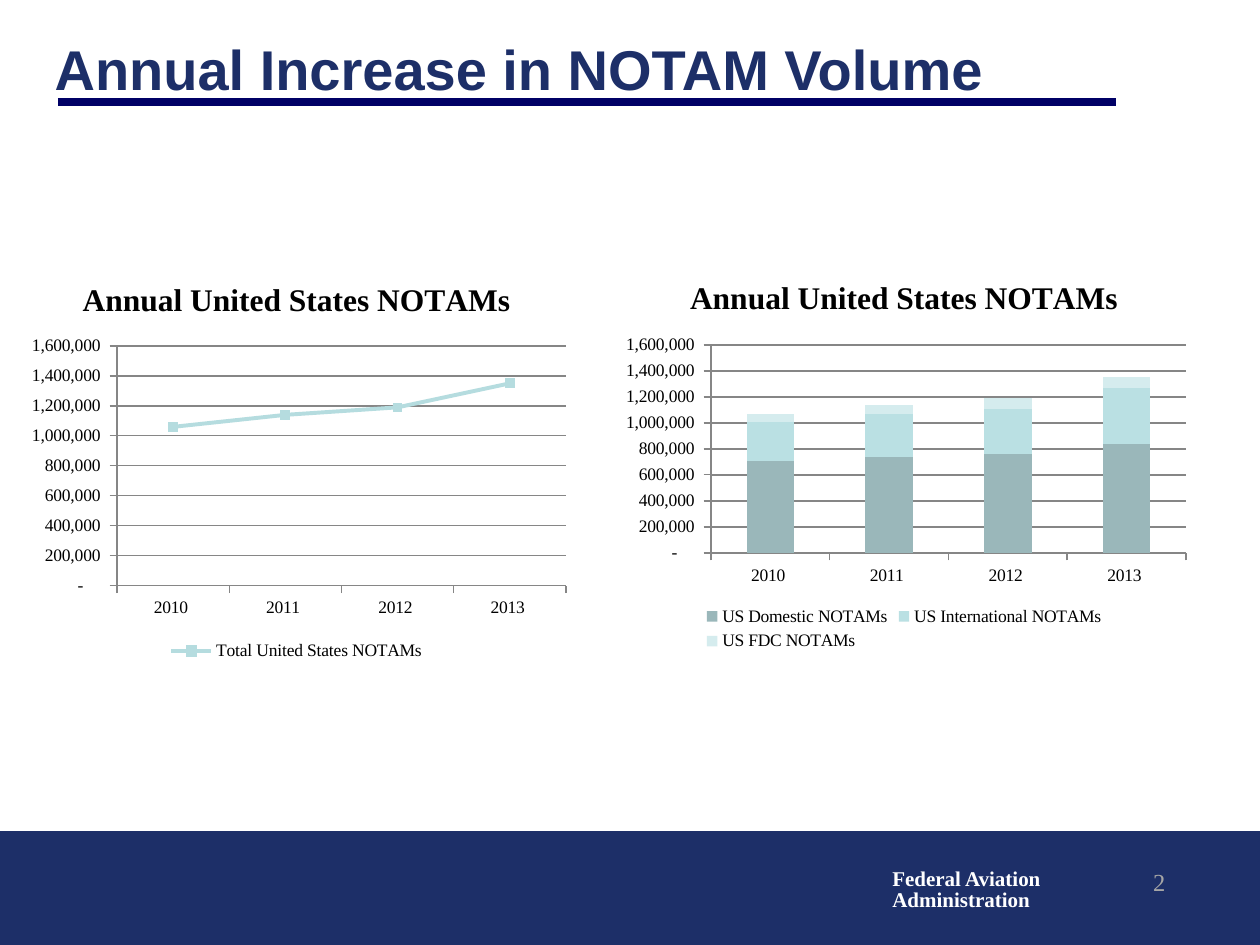
from lxml import etree
from pptx import Presentation
from pptx import util as u
from pptx.chart.data import CategoryChartData
from pptx.dml.color import RGBColor
from pptx.enum import chart as ch, shapes, text
from pptx.oxml.ns import qn

SCALE = 914400 / 126
SERIF, SANS = "Times New Roman", "Arial"
C = {"navy": "1D2F68", "rule": "000066", "white": "FFFFFF", "black": "000000",
     "number": "A6A6A6", "grid": "868686", "total": "B5DCDF",
     "domestic": "9AB7BA", "international": "BAE0E3", "fdc": "D5ECEE"}
YEARS = ["2010 ", "2011 ", "2012 ", "2013 "]
NUMBER_FORMAT = r'_(* #,##0_);_(* \(#,##0\);_(* "-"??_);_('


def px(n):
    return u.Emu(round(n * SCALE))


def rgb(name):
    return RGBColor.from_string(C[name])


def set_font(f, size, color="black", bold=False, name=SERIF):
    f.size, f.bold, f.name = u.Pt(size), bold, name
    f.color.rgb = rgb(color)


def add_text(sp, lines, size, color, bold=False, name=SERIF, wrap=True,
             align=text.PP_ALIGN.LEFT, anchor=text.MSO_ANCHOR.TOP, spacing=1.0):
    tf = sp.text_frame
    tf.word_wrap, tf.vertical_anchor = wrap, anchor
    tf.auto_size = text.MSO_AUTO_SIZE.NONE
    for i, line in enumerate(lines):
        p = tf.add_paragraph() if i else tf.paragraphs[0]
        p.alignment, p.line_spacing = align, spacing
        r = p.add_run()
        r.text = line
        set_font(r.font, size, color, bold, name)


def add_heading(s, x, y, w, h):
    sp = s.shapes.title
    sp.left, sp.top, sp.width, sp.height = map(px, (x, y, w, h))
    add_text(sp, ["Annual Increase in NOTAM Volume"], 32, "navy", True, SANS,
             anchor=text.MSO_ANCHOR.MIDDLE)
    rule_y = px(y + 76)
    ln = s.shapes.add_connector(shapes.MSO_CONNECTOR.STRAIGHT,
                                px(x + 16), rule_y, px(x + 1074), rule_y)
    ln.line.color.rgb, ln.line.width = rgb("rule"), u.Pt(4.5)
    etree.SubElement(ln._element.spPr, qn("a:effectLst"))


def add_footer(s, x, y, w, h):
    sp = s.shapes.add_shape(shapes.MSO_SHAPE.RECTANGLE, px(x), px(y), px(w), px(h))
    sp.shadow.inherit = False
    sp.fill.solid()
    sp.fill.fore_color.rgb = sp.line.color.rgb = rgb("navy")
    sp.line.width = u.Pt(0.75)
    agency = s.shapes.add_textbox(px(x + 880), px(y + 31), px(175), px(55))
    add_text(agency, ["Federal Aviation", "Administration"], 12, "white", True,
             wrap=False, spacing=0.85)
    number = s.shapes.add_textbox(px(x + 916), px(y + 29), px(262), px(63))
    add_text(number, ["2"], 14, "number", align=text.PP_ALIGN.RIGHT)


def place_plot(chart, fractions):
    area = chart._chartSpace.chart.plotArea
    for old in area.findall(qn("c:layout")):
        area.remove(old)
    layout = etree.Element(qn("c:layout"))
    area.insert(0, layout)
    manual = etree.SubElement(layout, qn("c:manualLayout"))
    settings = [("layoutTarget", "inner"), ("xMode", "edge"), ("yMode", "edge")]
    settings += zip("xywh", (f"{v:.4f}" for v in fractions))
    for tag, val in settings:
        etree.SubElement(manual, qn("c:" + tag)).set("val", val)


def add_notam_chart(s, kind, x, y, w, h, plot_box, series):
    data = CategoryChartData(number_format="#,##0")
    data.categories = YEARS
    for name, values, _ in series:
        data.add_series(name, values)
    chart = s.shapes.add_chart(kind, px(x), px(y), px(w), px(h), data).chart
    set_font(chart.font, 10)
    chart.has_title = True
    tf = chart.chart_title.text_frame
    tf.text = "Annual United States NOTAMs"
    set_font(tf.paragraphs[0].runs[0].font, 18, bold=True)
    chart.chart_title.include_in_layout = False
    chart.has_legend = True
    chart.legend.position = ch.XL_LEGEND_POSITION.BOTTOM
    chart.legend.include_in_layout = False
    set_font(chart.legend.font, 10)
    va, ca = chart.value_axis, chart.category_axis
    va.minimum_scale, va.maximum_scale, va.major_unit = 0, 1600000, 200000
    va.has_major_gridlines = True
    va.tick_labels.number_format = NUMBER_FORMAT
    va.tick_labels.number_format_is_linked = False
    for ax in (va, ca):
        ax.major_tick_mark = ch.XL_TICK_MARK.OUTSIDE
        set_font(ax.tick_labels.font, 10)
    for fmt in (va.format, ca.format, va.major_gridlines.format):
        fmt.line.color.rgb, fmt.line.width = rgb("grid"), u.Pt(0.75)
    left, top, width, height = plot_box
    place_plot(chart, (left / w, top / h, width / w, height / h))
    chart.plots[0].vary_by_categories = False
    for ser, (_, _, color) in zip(chart.plots[0].series, series):
        if kind == ch.XL_CHART_TYPE.LINE_MARKERS:
            ser.smooth = False
            ser.format.line.color.rgb, ser.format.line.width = rgb(color), u.Pt(2.25)
            ser.marker.style, ser.marker.size = ch.XL_MARKER_STYLE.SQUARE, 5
            ser.marker.format.line.color.rgb = rgb(color)
            fill = ser.marker.format.fill
        else:
            fill = ser.format.fill
        fill.solid()
        fill.fore_color.rgb = rgb(color)
    return chart


def main():
    prs = Presentation()
    prs.slide_width, prs.slide_height = px(1260), px(945)
    s = prs.slides.add_slide(prs.slide_layouts[5])
    add_footer(s, 0, 832, 1260, 112)
    add_heading(s, 42, 26, 1168, 84)
    add_notam_chart(s, ch.XL_CHART_TYPE.LINE_MARKERS, 16, 260, 561, 406,
                    (101, 86, 449, 240),
                    [("Total United States NOTAMs",
                      (1060000, 1140000, 1190000, 1350000), "total")])
    stacked = add_notam_chart(
        s, ch.XL_CHART_TYPE.COLUMN_STACKED, 610, 258, 588, 398,
        (101, 87, 475, 208),
        [("US Domestic NOTAMs", (710000, 740000, 760000, 840000), "domestic"),
         ("US International NOTAMs", (300000, 330000, 350000, 430000), "international"),
         ("US FDC NOTAMs", (60000, 70000, 80000, 80000), "fdc")])
    stacked.plots[0].gap_width, stacked.plots[0].overlap = 150, 100
    prs.save("out.pptx")


if __name__ == "__main__":
    main()
